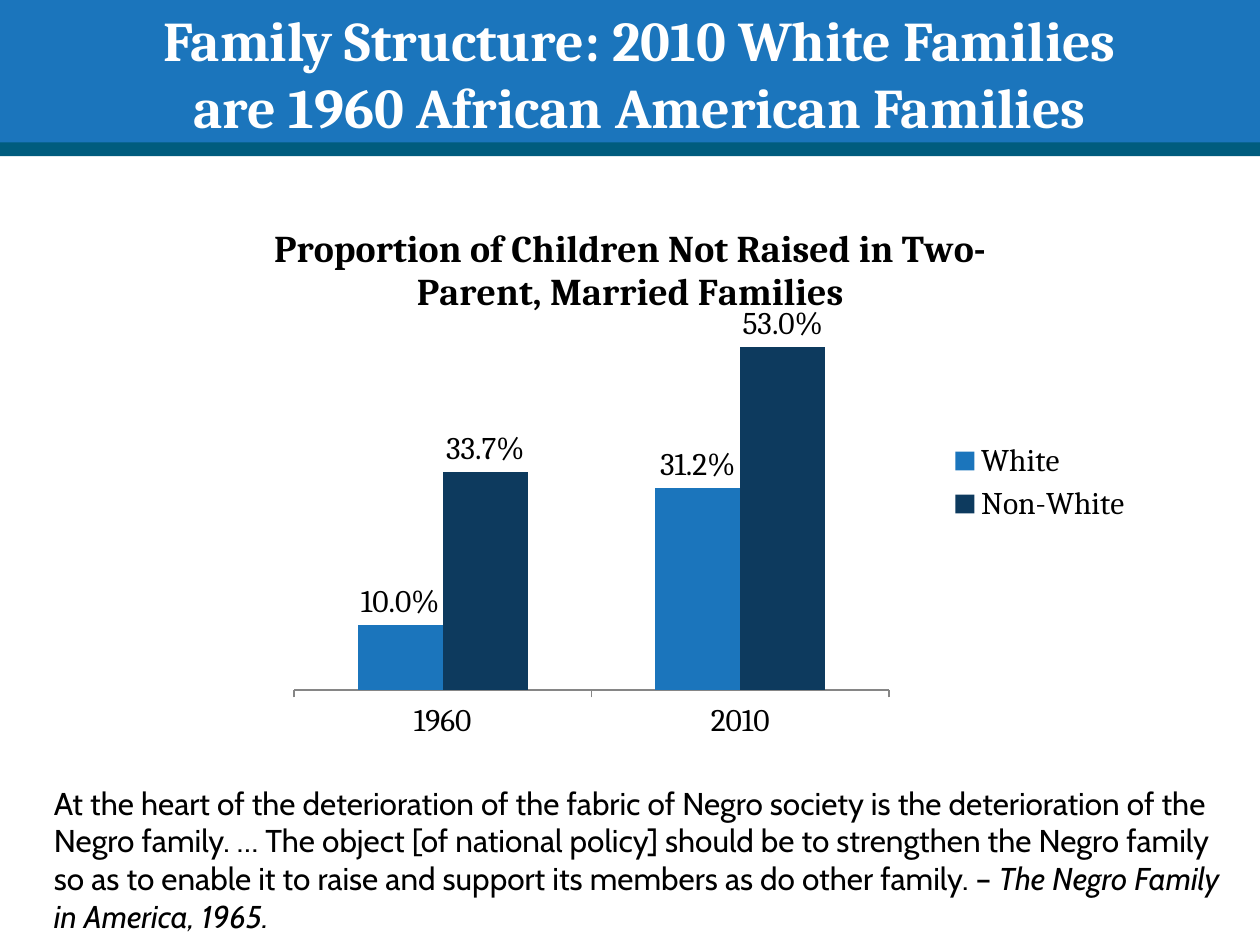
from lxml.etree import SubElement
from pptx import Presentation
from pptx.chart.data import CategoryChartData
from pptx.dml.color import RGBColor
from pptx.enum.chart import XL_CHART_TYPE as ChartType
from pptx.enum.chart import XL_LABEL_POSITION as LabelPosition
from pptx.enum.chart import XL_LEGEND_POSITION as LegendPosition
from pptx.enum.chart import XL_TICK_MARK as TickMark
from pptx.enum.shapes import MSO_SHAPE as ShapeType
from pptx.enum.text import MSO_ANCHOR as Anchor
from pptx.enum.text import MSO_AUTO_SIZE as AutoSize
from pptx.enum.text import PP_ALIGN as Align
from pptx.oxml.ns import qn
from pptx.util import Inches, Pt

BLUE = RGBColor(0x1B, 0x75, 0xBC)
TEAL = RGBColor(0x00, 0x5C, 0x7E)
NAVY = RGBColor(0x0D, 0x3A, 0x5E)
GRAY = RGBColor(0x86, 0x86, 0x86)
BLACK = RGBColor(0x00, 0x00, 0x00)
WHITE = RGBColor(0xFF, 0xFF, 0xFF)

TITLE = "Family Structure: 2010 White Families\vare 1960 African American Families"
CHART_TITLE = "Proportion of Children Not Raised in Two-Parent, Married Families"
QUOTE = (
    "At the heart of the deterioration of the fabric of Negro society is the "
    "deterioration of the Negro family. … The object [of national policy] should "
    "be to strengthen the Negro family so as to enable it to raise and support "
    "its members as do other family. – "
)
QUOTE_SOURCE = "The Negro Family in America, 1965."
SERIES = [("White", (0.1, 0.312), BLUE), ("Non-White", (0.337, 0.53), NAVY)]


def set_font(font, name, size, color, bold=None):
    font.name = name
    font.size = Pt(size)
    font.color.rgb = color
    font.bold = bold


def add_band(group, top, height, color):
    band = group.shapes.add_shape(
        ShapeType.RECTANGLE, Inches(-0.01), Inches(top), Inches(10.01), Inches(height)
    )
    band.shadow.inherit = False
    band.fill.solid()
    band.fill.fore_color.rgb = color
    band.line.fill.background()


def add_header(slide):
    group = slide.shapes.add_group_shape()
    add_band(group, -0.17, 1.33, BLUE)
    add_band(group, 1.13, 0.11, TEAL)

    title = slide.shapes.title
    group.element.addnext(title.element)
    title.left, title.top = Inches(0.58), Inches(0)
    title.width, title.height = Inches(9), Inches(0.83)
    frame = title.text_frame
    frame.auto_size = AutoSize.NONE
    frame.vertical_anchor = Anchor.TOP
    frame.margin_left = frame.margin_right = Inches(0.04)
    frame.margin_top = frame.margin_bottom = Inches(0.04)
    frame.text = TITLE
    paragraph = frame.paragraphs[0]
    paragraph.alignment = Align.CENTER
    set_font(paragraph.font, "Cambria", 32, WHITE, True)


def set_plot_layout(chart, x, y, width, height):
    plot_area = chart.element.find(".//" + qn("c:plotArea"))
    layout = plot_area.find(qn("c:layout"))
    if layout is None:
        layout = SubElement(plot_area, qn("c:layout"))
        plot_area.insert(0, layout)
    manual = SubElement(layout, qn("c:manualLayout"))
    settings = [
        ("layoutTarget", "inner"), ("xMode", "edge"), ("yMode", "edge"),
        ("x", x), ("y", y), ("w", width), ("h", height),
    ]
    for tag, value in settings:
        SubElement(manual, qn("c:" + tag)).set("val", str(value))


def format_axes(chart):
    category_axis = chart.category_axis
    category_axis.major_tick_mark = TickMark.OUTSIDE
    category_axis.format.line.color.rgb = GRAY
    value_axis = chart.value_axis
    value_axis.visible = False
    value_axis.has_major_gridlines = False
    value_axis.minimum_scale = 0
    value_axis.maximum_scale = 0.6


def format_series(series, color):
    series.format.fill.solid()
    series.format.fill.fore_color.rgb = color
    series.invert_if_negative = False
    labels = series.data_labels
    labels.show_value = True
    labels.number_format = "0.0%"
    labels.number_format_is_linked = False
    labels.position = LabelPosition.OUTSIDE_END


def add_family_chart(slide):
    data = CategoryChartData(number_format="0.0%")
    data.categories = ["1960", "2010"]
    for name, values, _ in SERIES:
        data.add_series(name, values)
    chart = slide.shapes.add_chart(
        ChartType.COLUMN_CLUSTERED,
        Inches(0.92), Inches(1.58), Inches(8.17), Inches(4.5), data,
    ).chart
    set_font(chart.font, "Cambria", 18, BLACK)

    chart.has_title = True
    chart.chart_title.include_in_layout = False
    chart.chart_title.text_frame.text = CHART_TITLE
    heading = chart.chart_title.text_frame.paragraphs[0]
    set_font(heading.font, "Cambria", 21.6, BLACK, True)

    chart.has_legend = True
    chart.legend.position = LegendPosition.RIGHT
    chart.legend.include_in_layout = False

    plot = chart.plots[0]
    plot.gap_width = 150
    plot.overlap = 0
    plot.vary_by_categories = False
    for series, (_, _, color) in zip(plot.series, SERIES):
        format_series(series, color)
    format_axes(chart)
    set_plot_layout(chart, 0.173, 0.181, 0.578, 0.685)


def add_quote(slide):
    box = slide.shapes.add_textbox(Inches(0.33), Inches(6.17), Inches(9.5), Inches(1.31))
    frame = box.text_frame
    frame.word_wrap = True
    frame.auto_size = AutoSize.SHAPE_TO_FIT_TEXT
    paragraph = frame.paragraphs[0]
    set_font(paragraph.font, "Cabin", 18, BLACK)
    paragraph.add_run().text = QUOTE
    source = paragraph.add_run()
    source.text = QUOTE_SOURCE
    source.font.italic = True


def main():
    presentation = Presentation()
    presentation.slide_width = Inches(10)
    presentation.slide_height = Inches(7.5)
    slide = presentation.slides.add_slide(presentation.slide_layouts[5])
    add_header(slide)
    add_family_chart(slide)
    add_quote(slide)
    presentation.save("out.pptx")


if __name__ == "__main__":
    main()
